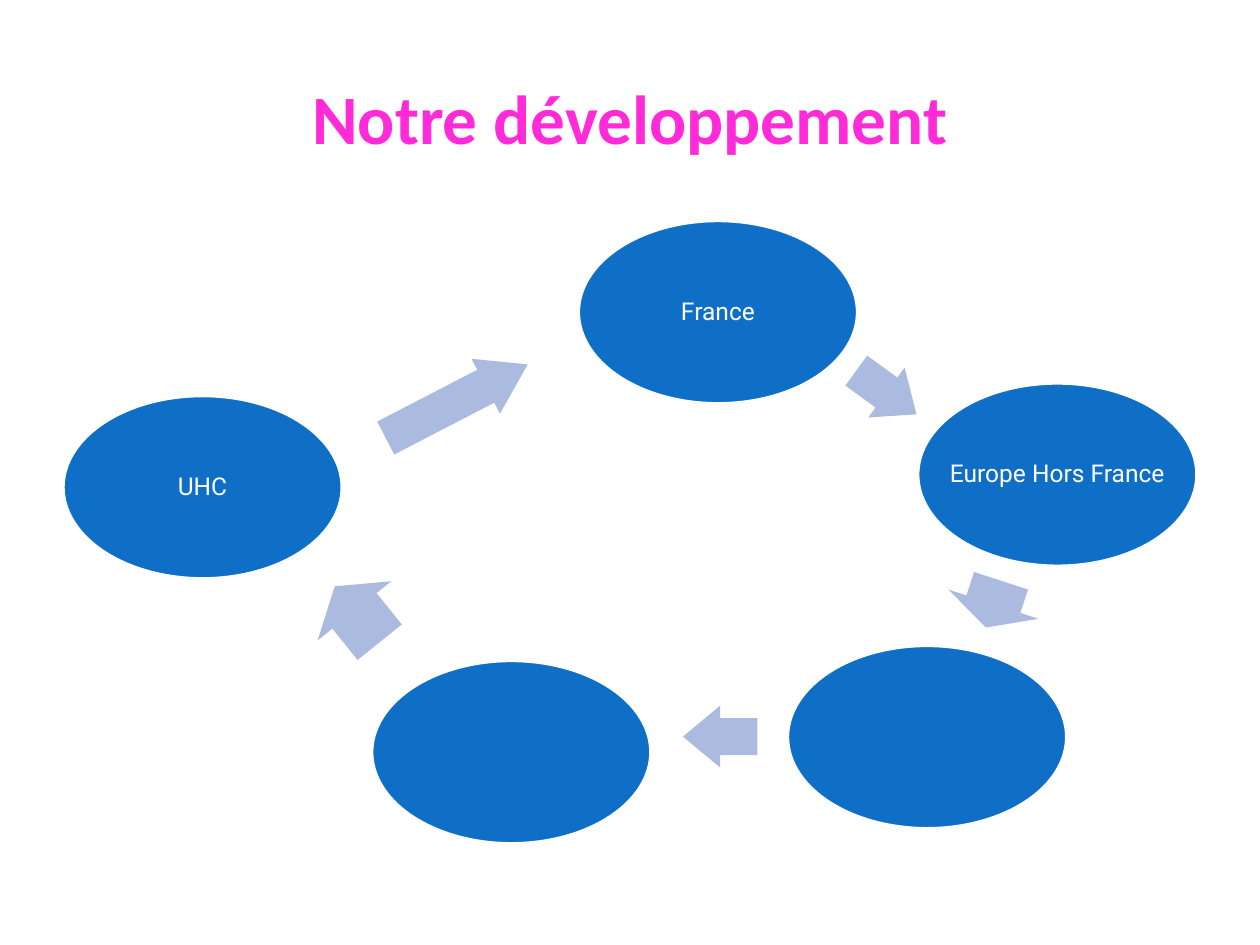
from collections import namedtuple

from pptx import Presentation
from pptx.dml.color import RGBColor
from pptx.enum.shapes import MSO_SHAPE
from pptx.enum.text import MSO_ANCHOR, PP_ALIGN
from pptx.util import Pt

Box = namedtuple("Box", "left top width height")

WHITE, BLUE, PALE_BLUE, PINK = "FFFFFF", "0F6FC6", "AABBDF", "FF2BD8"
TITLE_FONT = {"name": "Calibri", "size": Pt(39.6), "bold": True}
LABEL_FONT = {"name": "Roboto", "size": Pt(14)}

OVAL_WIDTH, OVAL_HEIGHT = 159.6, 104.8
SHAFT_SHARE = 0.6

# Label, left and top of each oval within the cycle
STAGES = [
    ("France", 294.5, 0),
    ("Europe Hors France", 488.4, 92.8),
    ("", 414, 242.8),
    ("", 176.4, 251.4),
    ("UHC", 0, 100),
]

# Centre x and y within the cycle, length, breadth, head length, rotation
ARROWS = [
    (470.5, 98.3, 42.5, 35.3, 21.2, 36),
    (531.7, 219.2, 28.1, 54, 14, 108),
    (375.5, 294.9, 42.5, 35.3, 21.2, 180),
    (168.1, 225, 41, 54, 18, 231.2),
    (225, 103.3, 91.4, 35.3, 27, 332.6),
]


def color(value):
    return RGBColor.from_string(value)


def write_text(shape, text, font_values, text_color, wrap):
    frame = shape.text_frame
    frame.word_wrap = wrap
    frame.vertical_anchor = MSO_ANCHOR.MIDDLE
    para = frame.paragraphs[0]
    para.alignment = PP_ALIGN.CENTER
    span = para.add_run()
    span.text = text
    for name, value in font_values.items():
        setattr(span.font, name, value)
    span.font.color.rgb = color(text_color)
    return para


def add_filled_shape(page, kind, box, fill):
    shape = page.shapes.add_shape(kind, *map(Pt, box))
    shape.shadow.inherit = False
    shape.fill.solid()
    shape.fill.fore_color.rgb = color(fill)
    return shape


def add_title(page, box):
    title = page.shapes.add_textbox(*map(Pt, box))
    write_text(title, "Notre développement", TITLE_FONT, PINK, True)


def add_stage(page, box, label):
    oval = add_filled_shape(page, MSO_SHAPE.OVAL, box, BLUE)
    oval.line.color.rgb = color(WHITE)
    oval.line.width = Pt(2)
    if label:
        para = write_text(oval, label, LABEL_FONT, WHITE, False)
        para.line_spacing = 0.9


def add_arrow(page, box, head, rotation):
    arrow = add_filled_shape(page, MSO_SHAPE.RIGHT_ARROW, box, PALE_BLUE)
    arrow.line.fill.background()
    arrow.adjustments[0] = SHAFT_SHARE
    arrow.adjustments[1] = head / min(box.width, box.height)
    arrow.rotation = rotation


def add_cycle(page, box):
    """Place each stage followed by the arrow to the next one."""
    for (label, left, top), arrow in zip(STAGES, ARROWS):
        add_stage(page, Box(box.left + left, box.top + top, OVAL_WIDTH, OVAL_HEIGHT), label)
        x, y, length, breadth, head, rotation = arrow
        arrow_box = Box(box.left + x - length / 2, box.top + y - breadth / 2, length, breadth)
        add_arrow(page, arrow_box, head, rotation)


def main():
    deck = Presentation()
    deck.slide_width, deck.slide_height = Pt(720), Pt(540)
    page = deck.slides.add_slide(deck.slide_layouts[6])
    add_title(page, Box(36, 21.6, 648, 90))
    add_cycle(page, Box(36, 126, 648, 356.4))
    deck.save("out.pptx")


if __name__ == "__main__":
    main()
